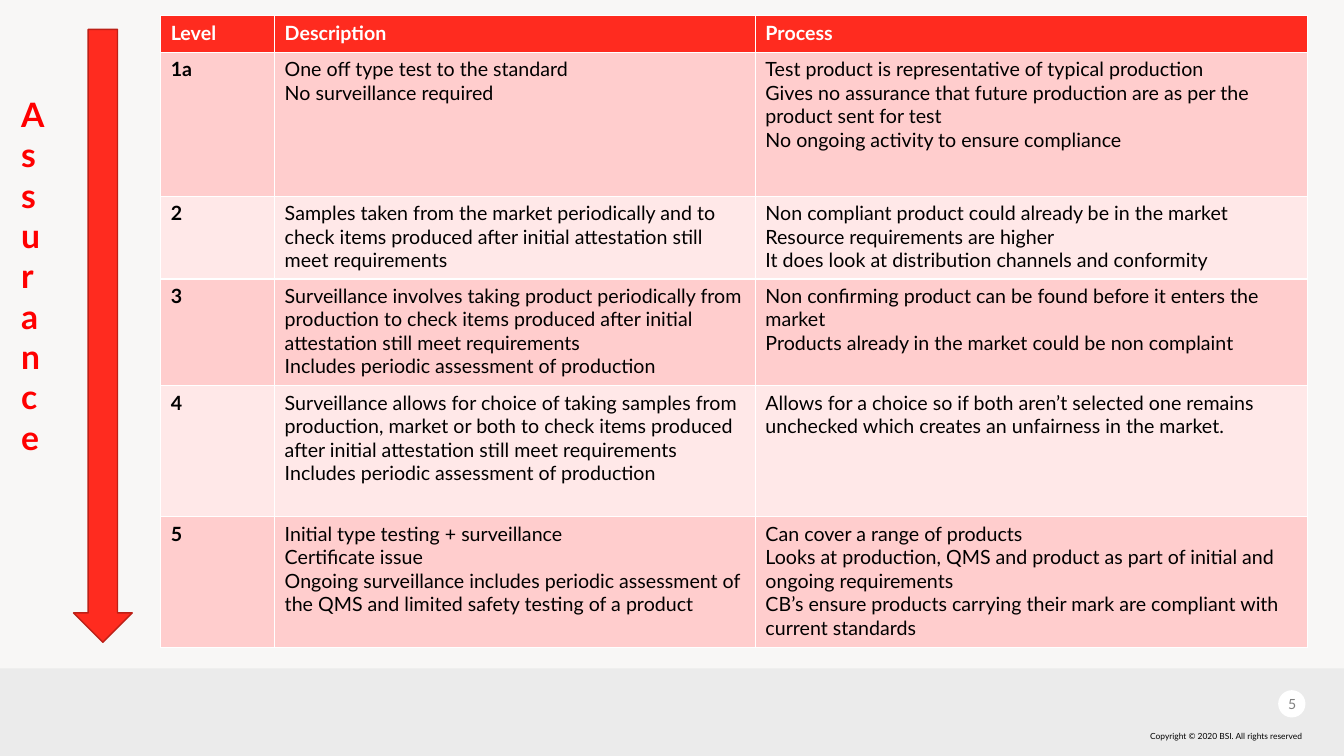
from pptx import Presentation
from pptx.dml.color import RGBColor
from pptx.enum.shapes import MSO_SHAPE
from pptx.enum.text import MSO_ANCHOR, PP_ALIGN
from pptx.util import Pt

RED = "FF2B1F"
BAND_COLOURS = ["FFE8E8", "FFCDCD"]
COLUMN_WIDTHS = [81.4, 343.4, 394.6]
ROW_HEIGHTS = [26, 103, 59, 76.3, 93.6, 93.6]
LEVELS = [
    ("Level", "Description", "Process"),
    ("1a",
     "One off type test to the standard\n"
     "No surveillance required",
     "Test product is representative of typical production\n"
     "Gives no assurance that future production are as per the product sent for test\n"
     "No ongoing activity to ensure compliance"),
    ("2",
     "Samples taken from the market periodically and to check items produced "
     "after initial attestation still meet requirements",
     "Non compliant product could already be in the market\n"
     "Resource requirements are higher\n"
     "It does look at distribution channels and conformity"),
    ("3",
     "Surveillance involves taking product periodically from production to check "
     "items produced after initial attestation still meet requirements\n"
     "Includes periodic assessment of production",
     "Non confirming product can be found before it enters the market\n"
     "Products already in the market could be non complaint"),
    ("4",
     "Surveillance allows for choice of taking samples from production, market or both "
     "to check items produced after initial attestation still meet requirements\n"
     "Includes periodic assessment of production",
     "Allows for a choice so if both aren’t selected one remains unchecked "
     "which creates an unfairness in the market."),
    ("5",
     "Initial type testing + surveillance\n"
     "Certificate issue\n"
     "Ongoing surveillance includes periodic assessment of the QMS "
     "and limited safety testing of a product",
     "Can cover a range of products\n"
     "Looks at production, QMS and product as part of initial and ongoing requirements\n"
     "CB’s ensure products carrying their mark are compliant with current standards"),
]


def rgb(colour):
    return RGBColor.from_string(colour)


def write(frame, text, size, colour, bold=False):
    """Fill a text frame, one paragraph per line of text."""
    frame.text = text
    frame.word_wrap = True
    for paragraph in frame.paragraphs:
        font = paragraph.font
        font.name, font.size, font.bold = "Lato", Pt(size), bold
        font.color.rgb = rgb(colour)


presentation = Presentation()
presentation.slide_width, presentation.slide_height = Pt(960), Pt(540)
slide = presentation.slides.add_slide(presentation.slide_layouts[6])
slide.background.fill.solid()
slide.background.fill.fore_color.rgb = rgb("F8F7F6")

# Footer band, page number disc and assurance arrow
for kind, left, top, width, height, fill, outline in [
    (MSO_SHAPE.RECTANGLE, 0, 477.5, 960, 62.5, "EBEBEB", None),
    (MSO_SHAPE.OVAL, 913, 493, 19.5, 19.5, "FFFFFF", None),
    (MSO_SHAPE.DOWN_ARROW, 52.5, 21, 42, 437.8, RED, "BD2017"),
]:
    shape = slide.shapes.add_shape(kind, Pt(left), Pt(top), Pt(width), Pt(height))
    shape.shadow.inherit = False
    shape.fill.solid()
    shape.fill.fore_color.rgb = rgb(fill)
    if outline:
        shape.line.color.rgb = rgb(outline)
        shape.line.width = Pt(1)
    else:
        shape.line.fill.background()

# Table of certification levels
levels = slide.shapes.add_table(
    len(LEVELS), len(COLUMN_WIDTHS), Pt(114.8), Pt(11.3),
    Pt(sum(COLUMN_WIDTHS)), Pt(sum(ROW_HEIGHTS))).table
for column, width in zip(levels.columns, COLUMN_WIDTHS):
    column.width = Pt(width)
for r, (row, height) in enumerate(zip(levels.rows, ROW_HEIGHTS)):
    row.height = Pt(height)
    for c, cell in enumerate(row.cells):
        header = r == 0
        cell.fill.solid()
        cell.fill.fore_color.rgb = rgb(RED if header else BAND_COLOURS[r % 2])
        write(cell.text_frame, LEVELS[r][c], 14,
              "FFFFFF" if header else "000000", header or c == 0)

# Vertical label beside the arrow
assurance = slide.shapes.add_textbox(Pt(8), Pt(63.5), Pt(49), Pt(336)).text_frame
write(assurance, "Assurance", 24, "FF0000", True)
assurance._txBody.bodyPr.set("vert", "wordArtVert")

# Footer texts
page_number = slide.shapes.add_textbox(Pt(910.8), Pt(488), Pt(24.5), Pt(30)).text_frame
copyright_line = slide.shapes.add_textbox(Pt(821.5), Pt(522), Pt(115), Pt(14.4)).text_frame
for frame in (page_number, copyright_line):
    frame.margin_left = frame.margin_right = frame.margin_top = frame.margin_bottom = 0
write(page_number, "5", 10, "808080")
page_number.vertical_anchor = MSO_ANCHOR.MIDDLE
page_number.paragraphs[0].alignment = PP_ALIGN.CENTER
write(copyright_line, "Copyright © 2020 BSI. All rights reserved", 6, "000000")

presentation.save("out.pptx")
